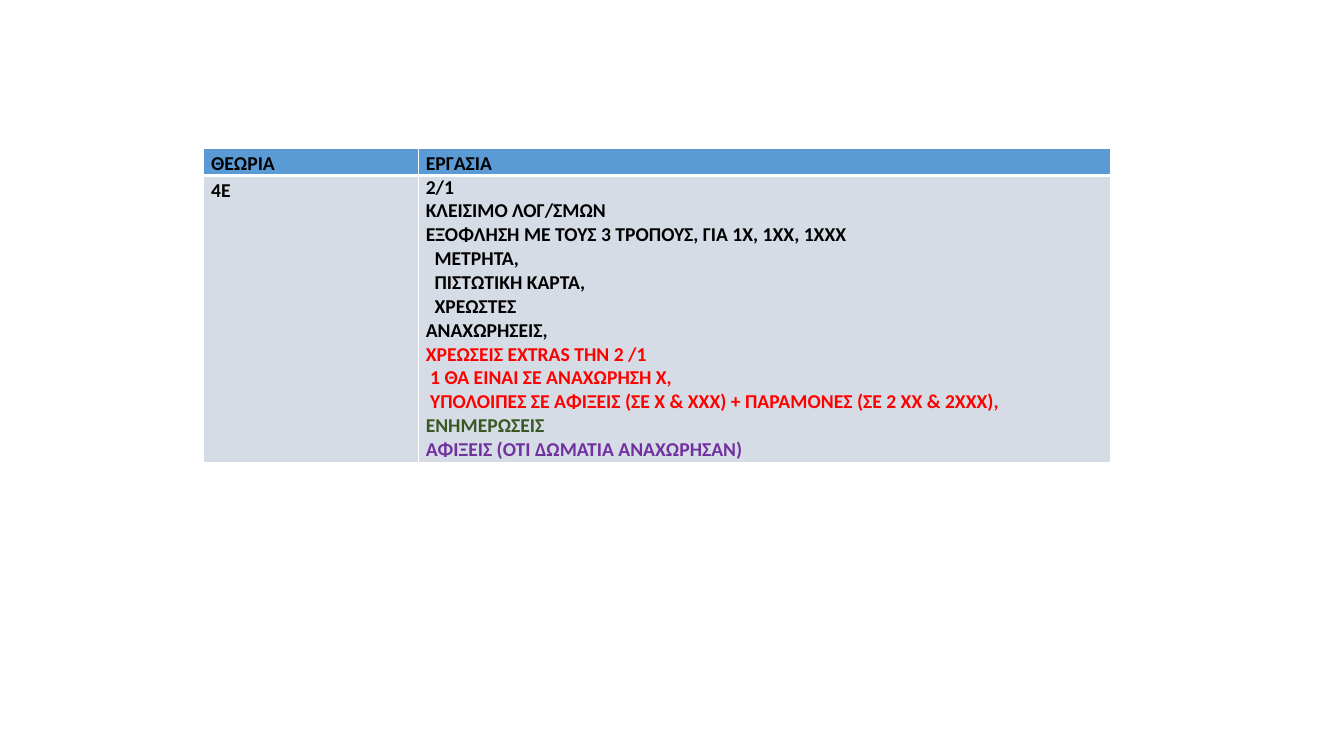
"""Build the slide with the table of theory and tasks."""
from dataclasses import dataclass

from lxml.etree import SubElement
from pptx import Presentation
from pptx.dml.color import RGBColor
from pptx.enum.text import PP_ALIGN
from pptx.oxml.ns import qn
from pptx.table import _Cell
from pptx.util import Cm, Pt

BLACK = RGBColor(0x00, 0x00, 0x00)
WHITE = RGBColor(0xFF, 0xFF, 0xFF)
RED = RGBColor(0xFF, 0x00, 0x00)
GREEN = RGBColor(0x38, 0x57, 0x23)
PURPLE = RGBColor(0x70, 0x30, 0xA0)
BLUE = RGBColor(0x5B, 0x9B, 0xD5)
GREY = RGBColor(0xD6, 0xDC, 0xE5)
STEP = Cm(0.11)
WIDTHS = (Cm(5.41), Cm(17.45))
HEIGHTS = (Cm(0.69), Cm(7.23))


@dataclass(frozen=True)
class Line:
    """One line of a cell, with its colour and indent level."""
    text: str
    color: RGBColor = BLACK
    level: int = 0


@dataclass(frozen=True)
class Block:
    """The lines of one cell and their layout."""
    lines: tuple[Line, ...]
    spaced: bool = True


TASKS = (
    Line("2/1"),
    Line("ΚΛΕΙΣΙΜΟ ΛΟΓ/ΣΜΩΝ"),
    Line("ΕΞΟΦΛΗΣΗ ΜΕ ΤΟΥΣ 3 ΤΡΟΠΟΥΣ, ΓΙΑ 1Χ, 1ΧΧ, 1ΧΧΧ"),
    Line("ΜΕΤΡΗΤΑ,", level=2),
    Line("ΠΙΣΤΩΤΙΚΗ ΚΑΡΤΑ,", level=2),
    Line("ΧΡΕΩΣΤΕΣ", level=2),
    Line("ΑΝΑΧΩΡΗΣΕΙΣ,"),
    Line("ΧΡΕΩΣΕΙΣ EXTRAS ΤΗΝ 2 /1", RED),
    Line("1 ΘΑ ΕΙΝΑΙ ΣΕ ΑΝΑΧΩΡΗΣΗ Χ,", RED, 1),
    Line("ΥΠΟΛΟΙΠΕΣ ΣΕ ΑΦΙΞΕΙΣ (ΣΕ Χ & ΧΧΧ) + ΠΑΡΑΜΟΝΕΣ (ΣΕ 2 ΧΧ & 2ΧΧΧ),", RED, 1),
    Line("ΕΝΗΜΕΡΩΣΕΙΣ", GREEN),
    Line("ΑΦΙΞΕΙΣ (ΟΤΙ ΔΩΜΑΤΙΑ ΑΝΑΧΩΡΗΣΑΝ)", PURPLE),
)
ROWS = (
    (Block((Line("ΘΕΩΡΙΑ"),)), Block((Line("ΕΡΓΑΣΙΑ"),))),
    (Block((Line("4E"),)), Block(TASKS, spaced=False)),
)


def add_edges(cell: _Cell, base: float) -> None:
    """Draw white cell borders, with the given width at the bottom."""
    props = cell._tc.get_or_add_tcPr()
    sides = (("lnL", 1), ("lnR", 1), ("lnT", 1), ("lnB", base))
    for place, (side, width) in enumerate(sides):
        edge = SubElement(props, qn(f"a:{side}"), w=str(Pt(width)))
        fill = SubElement(edge, qn("a:solidFill"))
        SubElement(fill, qn("a:srgbClr"), val=str(WHITE))
        props.insert(place, edge)


def fill_cell(cell: _Cell, block: Block, color: RGBColor, base: float) -> None:
    """Write and format one cell."""
    cell.fill.solid()
    cell.fill.fore_color.rgb = color
    add_edges(cell, base)
    cell.margin_left = cell.margin_right = Cm(0.19)
    cell.margin_top = cell.margin_bottom = 0
    frame = cell.text_frame
    frame.text = "\n".join(line.text for line in block.lines)
    for para, line in zip(frame.paragraphs, block.lines):
        if block.spaced:
            para.alignment = PP_ALIGN.JUSTIFY
            para.line_spacing = 1.15
        if line.level:
            para._p.get_or_add_pPr().set("marL", str(line.level * STEP))
        font = para.runs[0].font
        font.name, font.size, font.bold = "Calibri", Pt(14), True
        font.color.rgb = line.color


def main() -> None:
    """Create the slide and save it."""
    deck = Presentation()
    deck.slide_width, deck.slide_height = Cm(33.87), Cm(19.05)
    slide = deck.slides.add_slide(deck.slide_layouts[6])
    table = slide.shapes.add_table(
        len(ROWS), len(WIDTHS), Cm(5.13), Cm(3.73), sum(WIDTHS), sum(HEIGHTS)
    ).table
    for column, width in zip(table.columns, WIDTHS):
        column.width = width
    for row, height, blocks, color, base in zip(
        table.rows, HEIGHTS, ROWS, (BLUE, GREY), (3, 1)
    ):
        row.height = height
        for cell, block in zip(row.cells, blocks):
            fill_cell(cell, block, color, base)
    deck.save("out.pptx")


if __name__ == "__main__":
    main()
